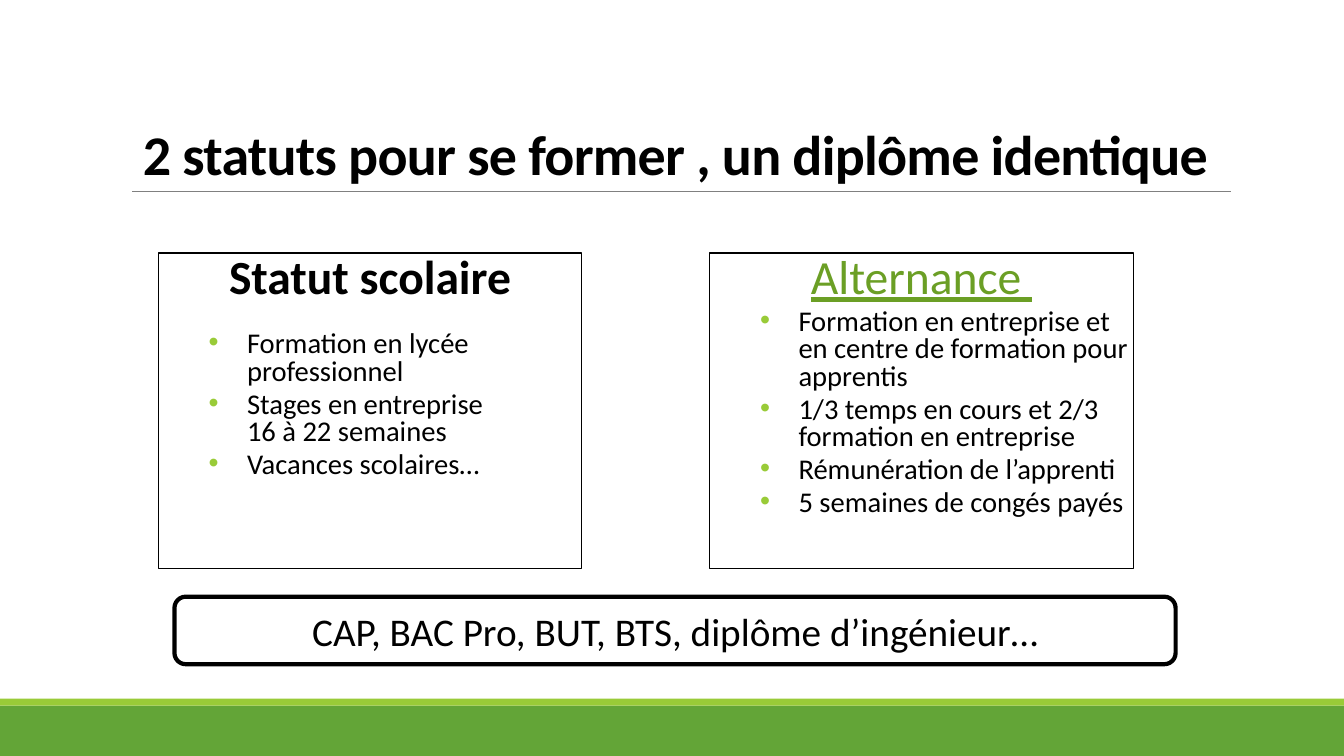
from dataclasses import dataclass
from typing import Optional

from lxml.etree import SubElement
from pptx import Presentation
from pptx.dml.color import RGBColor
from pptx.enum.shapes import MSO_CONNECTOR as Connector, MSO_SHAPE as Preset
from pptx.enum.text import MSO_ANCHOR as Anchor, PP_ALIGN as Align
from pptx.oxml.ns import qn
from pptx.util import Inches, Pt

WIDTH, HEIGHT = Inches(13.33), Inches(7.5)


@dataclass(frozen=True)
class Theme:
    font: str = "Calibri"
    ink: str = "000000"
    paper: str = "FFFFFF"
    band: str = "63A537"
    accent: str = "99CB38"
    link: str = "6B9F25"
    rule: str = "808080"
    title_size: float = 40
    heading_size: float = 34
    banner_size: float = 28
    item_size: float = 20.4


@dataclass(frozen=True)
class Area:
    """Left, top, width and height in percent of the slide."""
    left: float
    top: float
    width: float
    height: float

    def box(self) -> tuple[int, int, int, int]:
        return (int(WIDTH * self.left / 100), int(HEIGHT * self.top / 100),
                int(WIDTH * self.width / 100), int(HEIGHT * self.height / 100))


@dataclass(frozen=True)
class Status:
    heading: str
    items: tuple[str, ...]
    first_gap: float
    color: str
    bold: bool = False
    underline: bool = False


THEME = Theme()
CARD = Area(11.78, 33.47, 31.51, 41.73)
CARD_STEP = 41.03
ITEM_GAP = 4
STATUSES = (
    Status("Statut scolaire",
           ("Formation en lycée professionnel",
            "Stages en entreprise \n16 à 22 semaines",
            "Vacances scolaires…"),
           first_gap=20, color=THEME.ink, bold=True),
    Status("Alternance ",
           ("Formation en entreprise et en centre de formation pour apprentis",
            "1/3 temps en cours et 2/3 formation en entreprise",
            "Rémunération de l’apprenti",
            "5 semaines de congés payés"),
           first_gap=ITEM_GAP, color=THEME.link, underline=True),
)


def add_panel(slide, area: Area, *, preset=Preset.RECTANGLE,
              fill: Optional[str] = None, line: Optional[str] = None,
              weight: float = 0.75):
    panel = slide.shapes.add_shape(preset, *area.box())
    panel.shadow.inherit = False
    if fill:
        panel.fill.solid()
        panel.fill.fore_color.rgb = RGBColor.from_string(fill)
    else:
        panel.fill.background()
    if line:
        panel.line.color.rgb = RGBColor.from_string(line)
        panel.line.width = Pt(weight)
    else:
        panel.line.fill.background()
    panel.text_frame.word_wrap = True
    return panel


def write(paragraph, text: str, *, size: float, color: str = THEME.ink,
          bold: bool = False, underline: bool = False, align=Align.CENTER,
          leading: float = 1.0, before: float = 0, tracking: float = 0) -> None:
    paragraph.text = text
    paragraph.alignment = align
    paragraph.line_spacing = leading
    paragraph.space_before = Pt(before)
    for run in paragraph.runs:
        font = run.font
        font.name, font.size = THEME.font, Pt(size)
        font.bold, font.underline = bold, underline
        font.color.rgb = RGBColor.from_string(color)
        if tracking:
            run._r.get_or_add_rPr().set("spc", str(int(tracking * 100)))


def add_bullet(paragraph) -> None:
    properties = paragraph._p.get_or_add_pPr()
    properties.set("marL", str(Inches(0.88)))
    properties.set("indent", str(Inches(-0.38)))
    bullet_color = SubElement(properties, qn("a:buClr"))
    SubElement(bullet_color, qn("a:srgbClr"), val=THEME.accent)
    SubElement(properties, qn("a:buFont"), typeface="Arial")
    SubElement(properties, qn("a:buChar"), char="•")


def add_title(slide, text: str) -> None:
    title = slide.shapes.add_textbox(*Area(9, 11.2, 82.52, 14.13).box())
    frame = title.text_frame
    frame.word_wrap = True
    frame.vertical_anchor = Anchor.BOTTOM
    write(frame.paragraphs[0], text, size=THEME.title_size, bold=True,
          leading=0.85, tracking=-0.5)


def add_rule(slide, area: Area) -> None:
    left, top, width, height = area.box()
    rule = slide.shapes.add_connector(Connector.STRAIGHT, left, top,
                                      left + width, top + height)
    rule.line.color.rgb = RGBColor.from_string(THEME.rule)
    rule.line.width = Pt(0.5)
    SubElement(rule._element.spPr, qn("a:effectLst"))


def add_status(slide, status: Status, column: int) -> None:
    area = Area(CARD.left + column * CARD_STEP, CARD.top, CARD.width, CARD.height)
    frame = add_panel(slide, area, line=THEME.ink).text_frame
    frame.margin_left = frame.margin_right = 0
    frame.vertical_anchor = Anchor.TOP
    write(frame.paragraphs[0], status.heading, size=THEME.heading_size,
          color=status.color, bold=status.bold, underline=status.underline,
          leading=0.8)
    for index, item in enumerate(status.items):
        paragraph = frame.add_paragraph()
        add_bullet(paragraph)
        write(paragraph, item, size=THEME.item_size, align=Align.LEFT, leading=0.8,
              before=ITEM_GAP if index else status.first_gap)


def add_banner(slide, text: str) -> None:
    banner = add_panel(slide, Area(12.98, 78.93, 74.49, 8.93),
                       preset=Preset.ROUNDED_RECTANGLE,
                       fill=THEME.paper, line=THEME.ink, weight=3)
    banner.text_frame.vertical_anchor = Anchor.MIDDLE
    write(banner.text_frame.paragraphs[0], text, size=THEME.banner_size)


def main() -> None:
    deck = Presentation()
    deck.slide_width, deck.slide_height = WIDTH, HEIGHT
    slide = deck.slides.add_slide(deck.slide_layouts[6])
    add_panel(slide, Area(0, 93.33, 100, 6.67), fill=THEME.band)
    add_panel(slide, Area(0, 92.4, 100, 0.93), fill=THEME.accent)
    add_rule(slide, Area(9.83, 25.33, 81.77, 0))
    add_title(slide, "2 statuts pour se former , un diplôme identique")
    for column, status in enumerate(STATUSES):
        add_status(slide, status, column)
    add_banner(slide, "CAP, BAC Pro, BUT, BTS, diplôme d’ingénieur…")
    deck.save("out.pptx")


if __name__ == "__main__":
    main()
